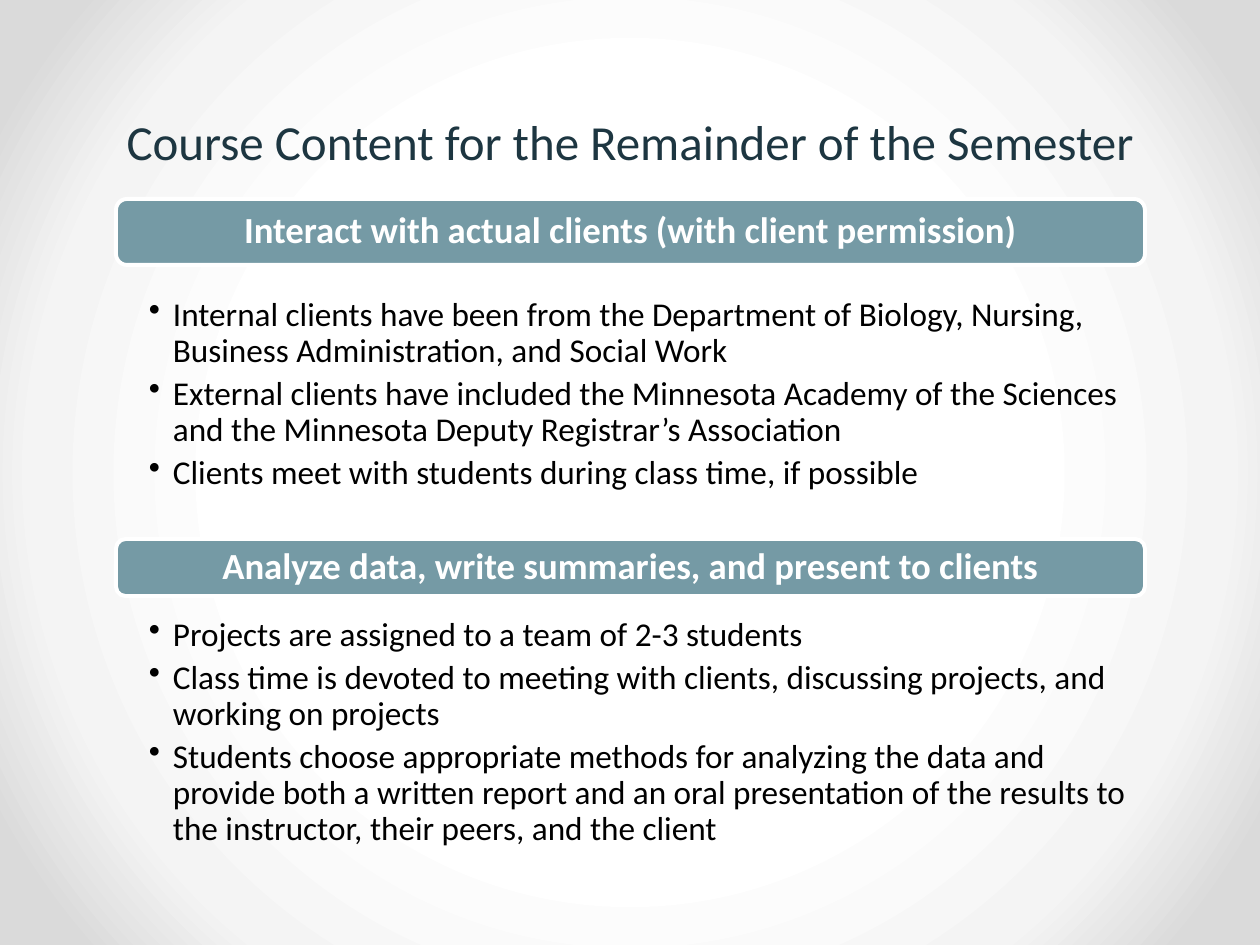
from pptx import Presentation
from pptx.dml.color import RGBColor
from pptx.enum.shapes import MSO_SHAPE
from pptx.enum.text import MSO_ANCHOR, PP_ALIGN
from pptx.oxml import parse_xml
from pptx.oxml.ns import nsdecls
from pptx.util import Pt

EMU_PER_PX = 914400 / 126
FONT = "Calibri"
NAVY = RGBColor(0x1D, 0x36, 0x41)
TEAL = RGBColor(0x75, 0x9A, 0xA5)
WHITE = RGBColor(0xFF, 0xFF, 0xFF)
BLACK = RGBColor(0, 0, 0)
BACKDROP = [(50, WHITE), (76, RGBColor(0xF4, 0xF4, 0xF4)), (92, RGBColor(0xDA, 0xDA, 0xDA))]
ROUND_RECT = MSO_SHAPE.ROUNDED_RECTANGLE
CENTER = PP_ALIGN.CENTER
LEFT = PP_ALIGN.LEFT
TOP, MIDDLE = MSO_ANCHOR.TOP, MSO_ANCHOR.MIDDLE

COLUMN_LEFT, COLUMN_WIDTH = 116, 1029
# Each section: heading, heading top and height, list top and height, bullets
SECTIONS = [
    ("Interact with actual clients (with client permission)", 199, 66, 294, 210, [
        "Internal clients have been from the Department of Biology, Nursing, "
        "Business Administration, and Social Work",
        "External clients have included the Minnesota Academy of the Sciences "
        "and the Minnesota Deputy Registrar’s Association",
        "Clients meet with students during class time, if possible",
    ]),
    ("Analyze data, write summaries, and present to clients", 539, 57, 614, 243, [
        "Projects are assigned to a team of 2-3 students",
        "Class time is devoted to meeting with clients, discussing projects, "
        "and working on projects",
        "Students choose appropriate methods for analyzing the data and provide "
        "both a written report and an oral presentation of the results to the "
        "instructor, their peers, and the client",
    ]),
]


def px(n):
    return round(n * EMU_PER_PX)


class SlideBuilder:
    def __init__(self, prs):
        self.slide = prs.slides.add_slide(prs.slide_layouts[5])

    def background(self, stops):
        """Fill the slide with a gradient spreading in circles from its centre."""
        gs = "".join(f'<a:gs pos="{pos * 1000}"><a:srgbClr val="{color}"/></a:gs>'
                     for pos, color in stops)
        bg = parse_xml(
            f'<p:bg {nsdecls("p", "a")}><p:bgPr><a:gradFill rotWithShape="1">'
            f'<a:gsLst>{gs}</a:gsLst><a:path path="circle">'
            '<a:fillToRect l="50000" t="50000" r="50000" b="50000"/></a:path>'
            '</a:gradFill><a:effectLst/></p:bgPr></p:bg>')
        self.slide.element.cSld.insert(0, bg)

    def style(self, p, size, color, bold=False, align=LEFT, spacing=0.9):
        p.alignment = align
        p.line_spacing = spacing
        for r in p.runs:
            r.font.name = FONT
            r.font.size = Pt(size)
            r.font.bold = bold
            r.font.color.rgb = color

    def title(self, text, x, y, w, h):
        s = self.slide.shapes.title
        s.left, s.top, s.width, s.height = map(px, (x, y, w, h))
        tf = s.text_frame
        tf.text = text
        tf.word_wrap = True
        tf.vertical_anchor = TOP
        self.style(tf.paragraphs[0], 28, NAVY, align=CENTER, spacing=1.0)

    def heading(self, text, x, y, w, h):
        s = self.slide.shapes.add_shape(ROUND_RECT, *map(px, (x, y, w, h)))
        s.shadow.inherit = False
        s.fill.solid()
        s.fill.fore_color.rgb = TEAL
        s.line.color.rgb = WHITE
        s.line.width = Pt(2.25)
        tf = s.text_frame
        tf.text = text
        tf.vertical_anchor = MIDDLE
        self.style(tf.paragraphs[0], 21, WHITE, bold=True, align=CENTER)

    def bullets(self, items, x, y, w, h):
        s = self.slide.shapes.add_textbox(*map(px, (x, y, w, h)))
        tf = s.text_frame
        tf.word_wrap = True
        tf.margin_left, tf.margin_right = px(33), px(19)
        tf.margin_top = tf.margin_bottom = px(4)
        tf.text = "\n".join(items)
        for p in tf.paragraphs:
            self.style(p, 19, BLACK)
            p.space_after = Pt(4)
            pPr = p._p.get_or_add_pPr()
            pPr.set("marL", str(px(24)))
            pPr.set("indent", str(-px(24)))
            pPr.append(parse_xml(f'<a:buChar {nsdecls("a")} char="•"/>'))


def main():
    prs = Presentation()
    prs.slide_width, prs.slide_height = px(1260), px(945)
    builder = SlideBuilder(prs)
    builder.background(BACKDROP)
    builder.title("Course Content for the Remainder of the Semester", 63, 105, 1134, 72)
    for text, top, height, list_top, list_height, items in SECTIONS:
        builder.heading(text, COLUMN_LEFT, top, COLUMN_WIDTH, height)
        builder.bullets(items, COLUMN_LEFT, list_top, COLUMN_WIDTH, list_height)
    prs.save("out.pptx")


if __name__ == "__main__":
    main()
